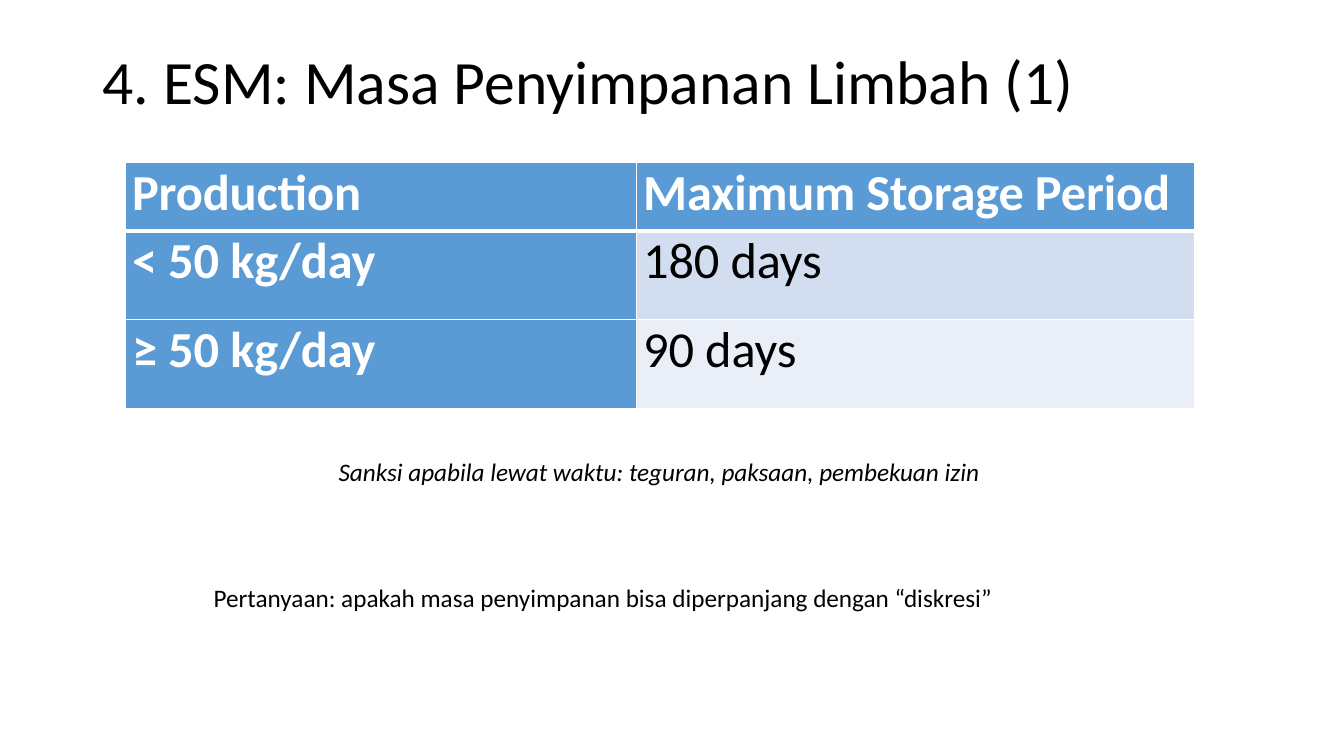
import dataclasses

import pptx
import pptx.dml.color
import pptx.enum.text
import pptx.oxml
import pptx.oxml.ns
import pptx.util

RGB = pptx.dml.color.RGBColor
ALIGN = pptx.enum.text.PP_ALIGN
ANCHOR = pptx.enum.text.MSO_ANCHOR
FIT = pptx.enum.text.MSO_AUTO_SIZE

PX = 9144  # EMU: 100 px to the inch
FONT = "Calibri"
BLACK = RGB(0x00, 0x00, 0x00)
WHITE = RGB(0xFF, 0xFF, 0xFF)
BLUE = RGB(0x5B, 0x9B, 0xD5)
BANDS = (RGB(0xD2, 0xDE, 0xEF), RGB(0xEA, 0xEF, 0xF7))

COLS = (507, 554)
ROWS = (68, 88, 88)
DATA = (
    ("Production", "Maximum Storage Period"),
    ("< 50 kg/day", "180 days"),
    ("≥ 50 kg/day", "90 days"),
)


@dataclasses.dataclass
class Label:
    text: str
    left: int
    top: int
    width: int
    height: int
    size: int = 18
    italic: bool = False
    title: bool = False


LABELS = (
    Label("4. ESM: Masa Penyimpanan Limbah (1)", 92, 40, 1150, 87, size=44, title=True),
    Label("Pertanyaan: apakah masa penyimpanan bisa diperpanjang dengan “diskresi”",
          202, 573, 812, 40),
    Label("Sanksi apabila lewat waktu: teguran, paksaan, pembekuan izin",
          326, 448, 658, 40, italic=True),
)


def px(count: int) -> pptx.util.Emu:
    return pptx.util.Emu(count * PX)


def style(run, size: int, color: RGB, bold: bool = False, italic: bool = False) -> None:
    font = run.font
    font.name = FONT
    font.size = pptx.util.Pt(size)
    font.color.rgb = color
    font.bold = bold
    font.italic = italic


def add_label(slide, label: Label) -> None:
    box = slide.shapes.add_textbox(
        px(label.left), px(label.top), px(label.width), px(label.height))
    frame = box.text_frame
    frame.text = label.text
    frame.word_wrap = label.title
    line = frame.paragraphs[0]
    if label.title:
        frame.vertical_anchor = ANCHOR.MIDDLE
        line.line_spacing = 0.9
    else:
        frame.auto_size = FIT.SHAPE_TO_FIT_TEXT
    style(line.runs[0], label.size, BLACK, italic=label.italic)


def add_edge(cell, side: str, width: int) -> None:
    edge = pptx.oxml.parse_xml(
        f'<a:ln{side} {pptx.oxml.ns.nsdecls("a")} w="{pptx.util.Pt(width)}">'
        f'<a:solidFill><a:srgbClr val="{WHITE}"/></a:solidFill></a:ln{side}>')
    cell._tc.get_or_add_tcPr().append(edge)


def fill_cell(cell, row: int, col: int) -> None:
    head = row == 0 or col == 0

    # White borders, thicker under the header row
    thick = {(0, "B"), (1, "T")}
    for side in "LRTB":
        add_edge(cell, side, 3 if (row, side) in thick else 1)
    cell.fill.solid()
    cell.fill.fore_color.rgb = BLUE if head else BANDS[row - 1]

    # Text
    cell.margin_left = cell.margin_right = px(7)
    cell.margin_top = cell.margin_bottom = 0
    cell.text_frame.text = DATA[row][col]
    line = cell.text_frame.paragraphs[0]
    line.alignment = ALIGN.JUSTIFY
    run = line.runs[0]
    style(run, 36, WHITE if head else BLACK, bold=head)
    run._r.get_or_add_rPr().set("spc", "-10")


def add_grid(slide, left: int, top: int) -> None:
    grid = slide.shapes.add_table(
        len(ROWS), len(COLS), px(left), px(top), px(sum(COLS)), px(sum(ROWS))).table
    for col, width in enumerate(COLS):
        grid.columns[col].width = px(width)
    for row, height in enumerate(ROWS):
        grid.rows[row].height = px(height)
        for col in range(len(COLS)):
            fill_cell(grid.cell(row, col), row, col)


def main() -> None:
    deck = pptx.Presentation()
    deck.slide_width, deck.slide_height = px(1333), px(750)
    slide = deck.slides.add_slide(deck.slide_layouts[6])

    # Storage periods
    add_grid(slide, 124, 161)

    # Title and remarks
    for label in LABELS:
        add_label(slide, label)
    deck.save("out.pptx")


if __name__ == "__main__":
    main()
